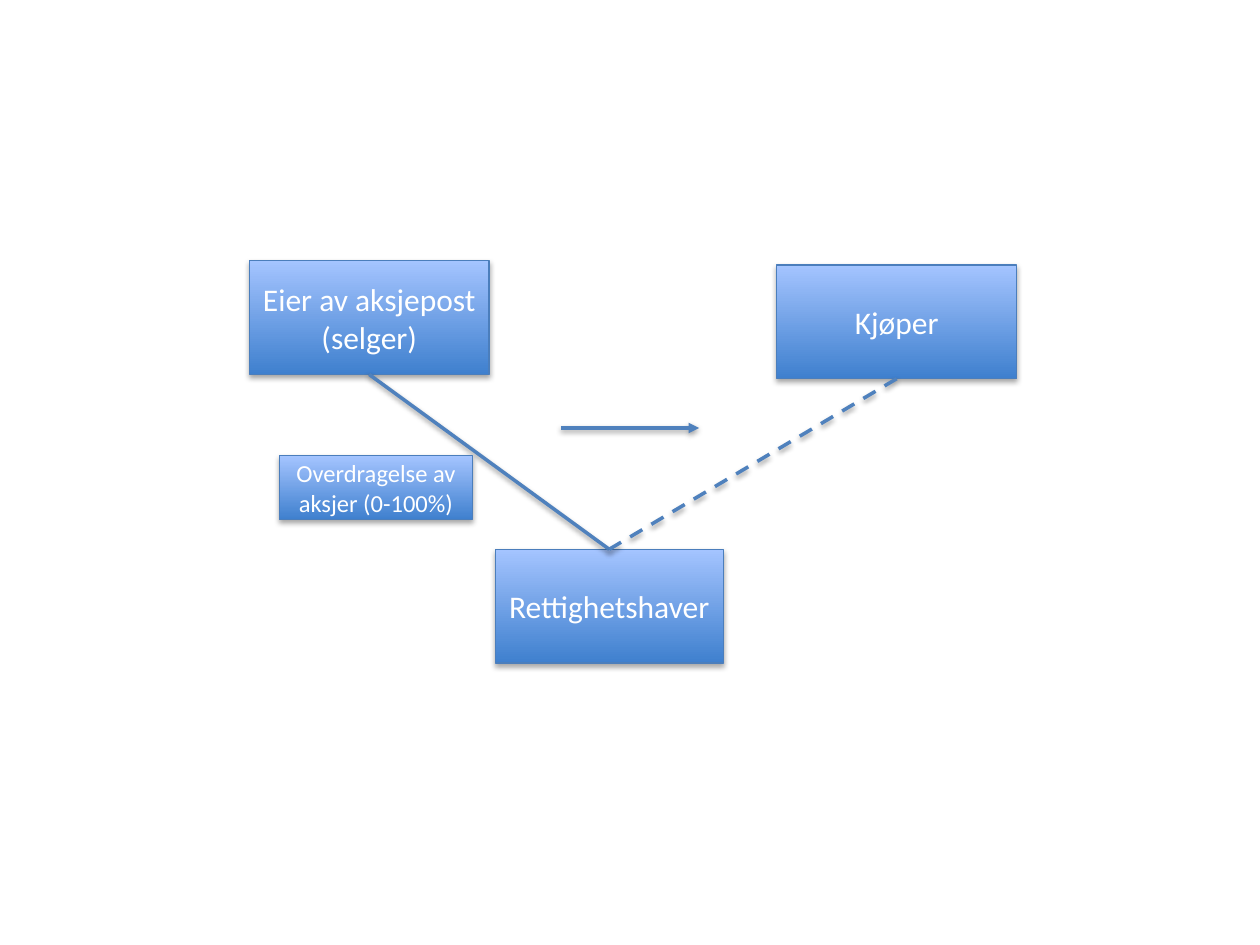
from lxml import etree
from pptx import Presentation
from pptx.enum import dml, shapes, text
from pptx.dml.color import RGBColor
from pptx.oxml import ns
from pptx.util import Pt

COLORS = {
    "bottom": "3F80CE",
    "top": "A4C4FF",
    "border": "4B7EBC",
    "link": "4F81BD",
    "text": "FFFFFF",
    "shadow": "000000",
}


def rgb(name):
    return RGBColor.from_string(COLORS[name])


class Diagram:
    font = "Calibri"

    def __init__(self, slide):
        self.slide = slide

    def shadow(self, sp, distance, opacity):
        effects = sp._element.spPr.find(ns.qn("a:effectLst"))
        if effects is None:
            effects = etree.SubElement(sp._element.spPr, ns.qn("a:effectLst"))
        outer = etree.SubElement(
            effects, ns.qn("a:outerShdw"), blurRad=str(Pt(3.15)),
            dist=str(Pt(distance)), dir="5400000", rotWithShape="0")
        color = etree.SubElement(outer, ns.qn("a:srgbClr"), val=COLORS["shadow"])
        etree.SubElement(color, ns.qn("a:alpha"), val=str(opacity * 1000))

    def box(self, label, left, top, width, height, size=18):
        sp = self.slide.shapes.add_shape(
            shapes.MSO_SHAPE.RECTANGLE, Pt(left), Pt(top), Pt(width), Pt(height))
        sp.fill.gradient()
        sp.fill.gradient_angle = 90
        for stop, name in zip(sp.fill.gradient_stops, ("bottom", "top")):
            stop.color.rgb = rgb(name)
        sp.line.color.rgb = rgb("border")
        sp.line.width = Pt(0.75)
        sp.shadow.inherit = False
        self.shadow(sp, 1.8, 35)
        tf = sp.text_frame
        tf.word_wrap = True
        tf.vertical_anchor = text.MSO_ANCHOR.MIDDLE
        tf.text = label
        p = tf.paragraphs[0]
        p.alignment = text.PP_ALIGN.CENTER
        r = p.runs[0]
        r.font.name = self.font
        r.font.size = Pt(size)
        r.font.color.rgb = rgb("text")
        return sp

    def line(self, x1=0, y1=0, x2=0, y2=0):
        cx = self.slide.shapes.add_connector(
            shapes.MSO_CONNECTOR.STRAIGHT, Pt(x1), Pt(y1), Pt(x2), Pt(y2))
        cx.line.color.rgb = rgb("link")
        cx.line.width = Pt(2)
        self.shadow(cx, 1.6, 38)
        return cx

    def link(self, upper, lower, dashed=False):
        cx = self.line()
        cx.begin_connect(upper, 2)
        cx.end_connect(lower, 0)
        if dashed:
            cx.line.dash_style = dml.MSO_LINE.DASH

    def arrow(self, x1, y1, x2, y2):
        cx = self.line(x1, y1, x2, y2)
        ln = cx._element.spPr.find(ns.qn("a:ln"))
        etree.SubElement(ln, ns.qn("a:tailEnd"), type="triangle")


def main():
    prs = Presentation()
    prs.slide_width, prs.slide_height = Pt(720), Pt(540)
    s = prs.slides.add_slide(prs.slide_layouts[6])
    d = Diagram(s)
    holder = d.box("Rettighetshaver", 283, 313.9, 130.3, 65)
    seller = d.box("Eier av aksjepost (selger)", 142.5, 149, 137, 65)
    buyer = d.box("Kjøper", 443.9, 151.4, 137, 65)
    d.link(seller, holder)
    d.link(buyer, holder, dashed=True)
    d.arrow(320.5, 244.6, 399.5, 244.6)
    d.box("Overdragelse av aksjer (0-100%)", 159.7, 260.5, 110.3, 36.5, size=14)
    prs.save("out.pptx")


if __name__ == "__main__":
    main()
